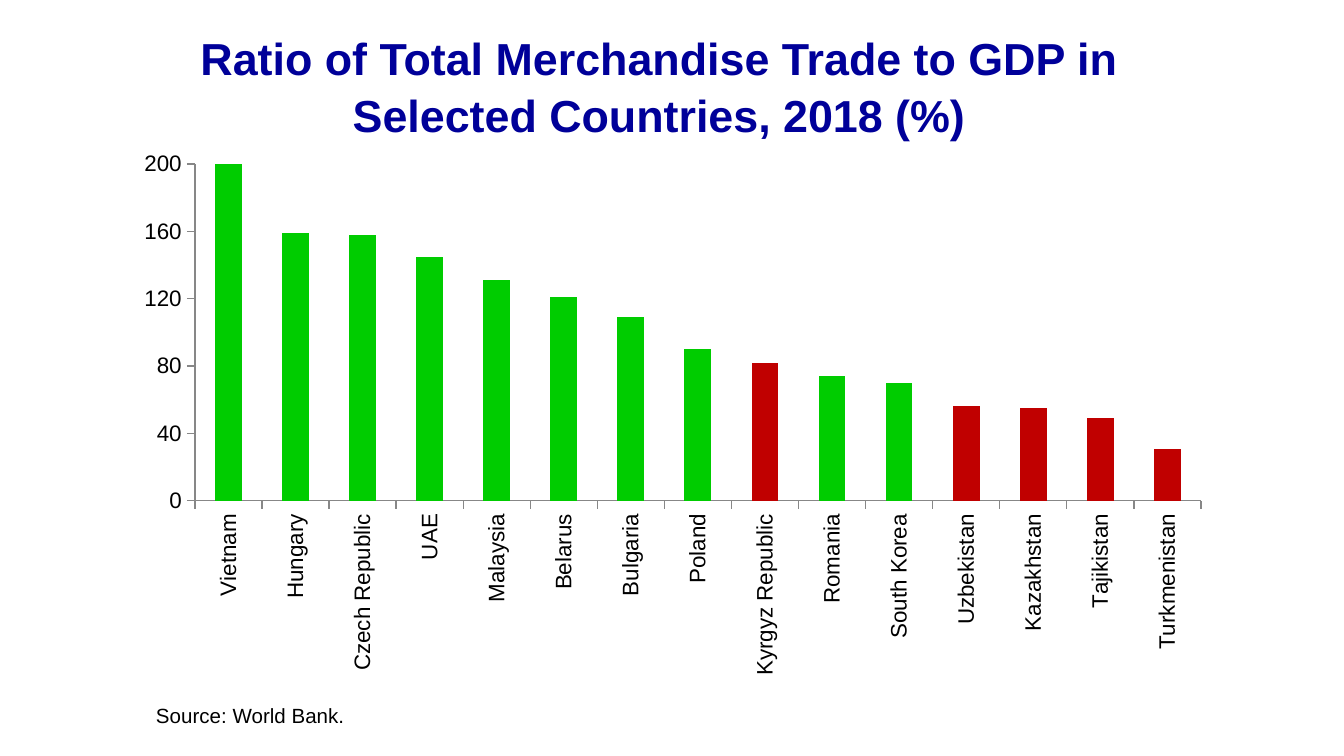
from lxml import etree
from pptx import Presentation
from pptx.chart.data import CategoryChartData
from pptx.dml.color import RGBColor
from pptx.enum import chart as ec, text as et
from pptx.oxml.ns import qn
from pptx.util import Pt

THEME = {
    "font": "Arial",
    "navy": RGBColor.from_string("000099"),
    "black": RGBColor.from_string("000000"),
    "green": RGBColor.from_string("00CC00"),
    "red": RGBColor.from_string("C00000"),
    "gray": RGBColor.from_string("878787"),
    "title": Pt(24),
    "label": Pt(12),
    "note": Pt(11),
}
TRADE = {
    "Vietnam": 200, "Hungary": 159, "Czech Republic": 158, "UAE": 145,
    "Malaysia": 131, "Belarus": 121, "Bulgaria": 109, "Poland": 90,
    "Kyrgyz Republic": 82, "Romania": 74, "South Korea": 70,
    "Uzbekistan": 56, "Kazakhstan": 55, "Tajikistan": 49, "Turkmenistan": 31,
}
ASIA = {"Kyrgyz Republic", "Uzbekistan", "Kazakhstan", "Tajikistan", "Turkmenistan"}


def style(font, size, color, bold=False):
    form = {"name": THEME["font"], "size": THEME[size], "bold": bold}
    for key, val in form.items():
        setattr(font, key, val)
    font.color.rgb = THEME[color]


def add_text(box, lines, size, color, bold=False, **form):
    frame = slide.shapes.add_textbox(*map(Pt, box)).text_frame
    frame.word_wrap = True
    frame.vertical_anchor = et.MSO_ANCHOR.MIDDLE
    frame.text = "\n".join(lines)
    for para in frame.paragraphs:
        for key, val in form.items():
            setattr(para, key, val)
        style(para.runs[0].font, size, color, bold)


deck = Presentation()
deck.slide_width, deck.slide_height = Pt(720), Pt(405)
slide = deck.slides.add_slide(deck.slide_layouts[6])

add_text((69, 16, 568, 59),
         ["Ratio of Total Merchandise Trade to GDP in", "Selected Countries, 2018 (%)"],
         "title", "navy", True, alignment=et.PP_ALIGN.CENTER, line_spacing=1.05)
add_text((76.5, 369, 568, 28.5), ["Source: World Bank."], "note", "black")

# Chart
data = CategoryChartData(number_format="0")
data.categories = list(TRADE)
data.add_series("Series 1", list(TRADE.values()))
chart = slide.shapes.add_chart(
    ec.XL_CHART_TYPE.COLUMN_CLUSTERED, *map(Pt, (65.5, 75.6, 589.7, 293)), data).chart
chart.has_legend = chart.has_title = False
style(chart.font, "label", "black")

# Bars
plot = chart.plots[0]
plot.gap_width, plot.vary_by_categories = 150, False
bars = plot.series[0]
bars.format.fill.solid()
bars.format.fill.fore_color.rgb = THEME["green"]
for i, land in enumerate(TRADE):
    if land in ASIA:
        fill = bars.points[i].format.fill
        fill.solid()
        fill.fore_color.rgb = THEME["red"]

# Axes
cats, vals = chart.category_axis, chart.value_axis
scale = {"minimum_scale": 0, "maximum_scale": 200, "major_unit": 40}
for key, val in scale.items():
    setattr(vals, key, val)
for axis in (cats, vals):
    axis.has_major_gridlines = False
    axis.major_tick_mark = ec.XL_TICK_MARK.OUTSIDE
    axis.minor_tick_mark = ec.XL_TICK_MARK.NONE
    axis.format.line.color.rgb = THEME["gray"]
    axis.format.line.width = Pt(0.75)
    style(axis.tick_labels.font, "label", "black")
vals.tick_labels.number_format = "0"
vals.tick_labels.number_format_is_linked = False
turn = cats._element.find(qn("c:txPr")).find(qn("a:bodyPr"))
turn.set("rot", "-5400000")
turn.set("vert", "horz")

# Plot area, as shares of the chart frame
area = chart._chartSpace.chart.plotArea
for old in area.findall(qn("c:layout")):
    area.remove(old)
layout = etree.Element(qn("c:layout"))
area.insert(0, layout)
manual = etree.SubElement(layout, qn("c:manualLayout"))
place = {"layoutTarget": "inner", "xMode": "edge", "yMode": "edge",
         "x": 0.066, "y": 0.042, "w": 0.914, "h": 0.616}
for key, val in place.items():
    etree.SubElement(manual, qn("c:" + key)).set("val", str(val))

deck.save("out.pptx")
